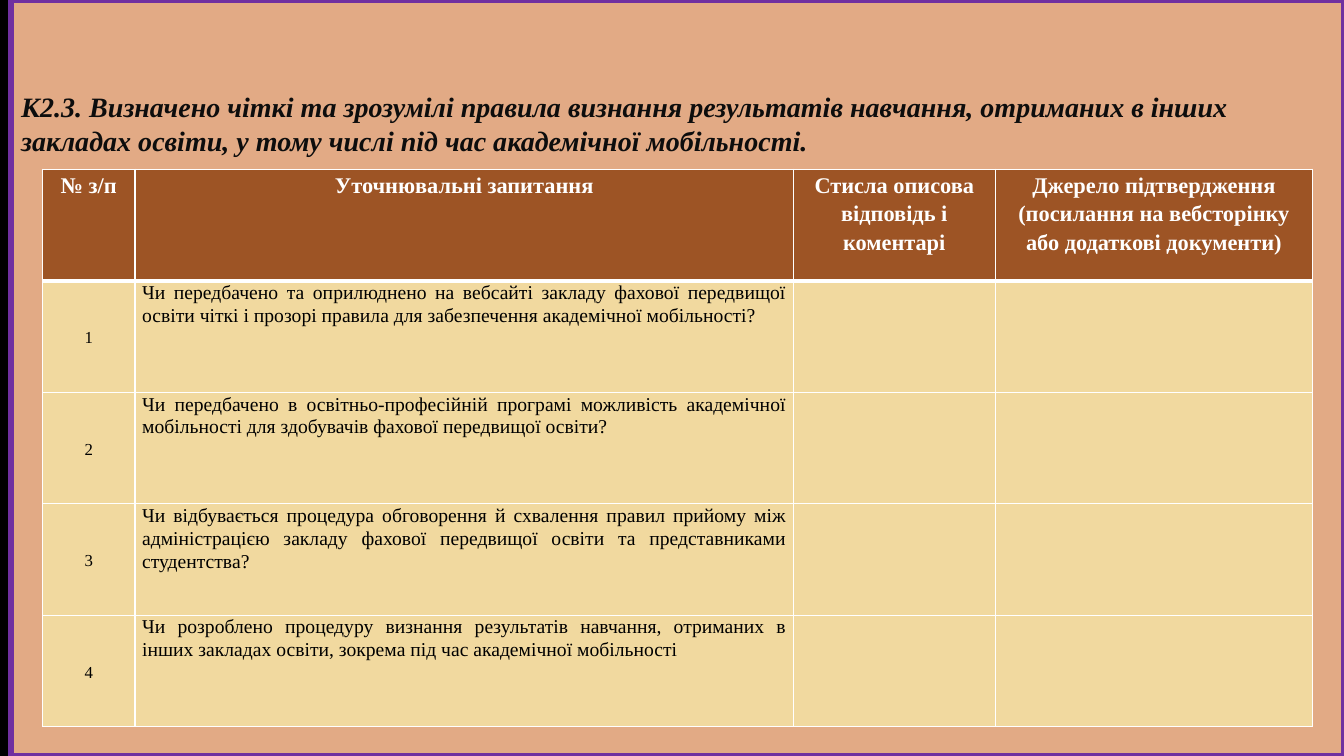
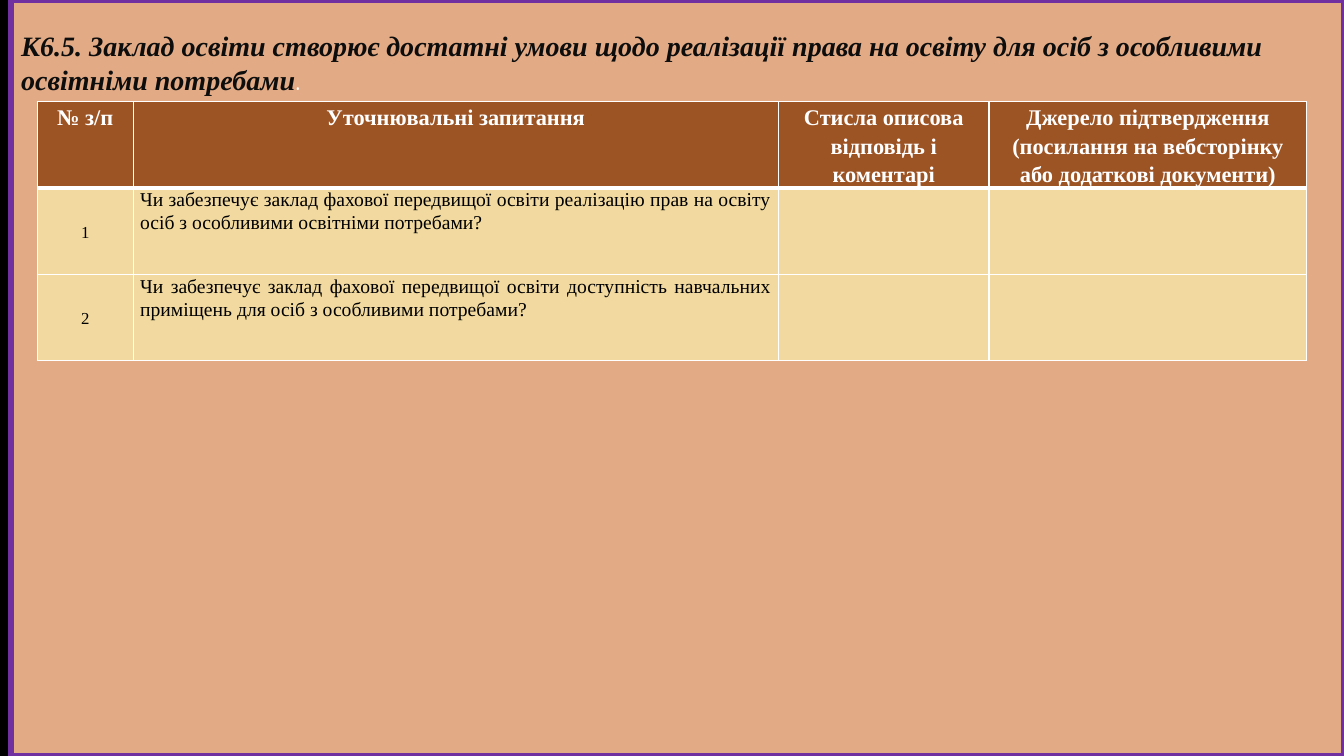
from dataclasses import dataclass

from lxml import etree
from pptx import Presentation
from pptx.dml.color import RGBColor
from pptx.enum.shapes import MSO_SHAPE
from pptx.enum.text import MSO_ANCHOR, MSO_AUTO_SIZE, PP_ALIGN
from pptx.oxml.ns import qn
from pptx.util import Inches, Pt

RECTANGLE = MSO_SHAPE.RECTANGLE
TOP, MIDDLE = MSO_ANCHOR.TOP, MSO_ANCHOR.MIDDLE
LEFT, CENTER, JUSTIFY = PP_ALIGN.LEFT, PP_ALIGN.CENTER, PP_ALIGN.JUSTIFY
NO_AUTOFIT = MSO_AUTO_SIZE.NONE


@dataclass(frozen=True)
class Theme:
    font: str = "Times New Roman"
    stop_font: str = "Quicksand"
    backdrop: str = "000000"
    panel: str = "E2AA85"
    frame: str = "7030A0"
    title: str = "0D0D0D"
    header: str = "9D5425"
    body: str = "F1D99F"
    light: str = "FFFFFF"
    dark: str = "000000"
    title_size: float = 20
    header_size: float = 16
    number_size: float = 12
    question_size: float = 14
    frame_width: float = 4.5
    rule: float = 1
    header_rule: float = 3


THEME = Theme()
HEADERS = [
    "№ з/п",
    "Уточнювальні запитання",
    "Стисла описова відповідь і коментарі",
    "Джерело підтвердження\n(посилання на вебсторінку або додаткові документи)",
]
CRITERIA = [
    {
        "title": ["К2.3. Визначено чіткі та зрозумілі правила визнання результатів навчання, отриманих в інших закладах освіти, у тому числі під час академічної мобільності."],
        "title_top": 0.87,
        "table": (0.42, 1.68, 12.6, 5.53),
        "columns": (0.92, 6.53, 2, 3.15),
        "questions": [
            "Чи передбачено та оприлюднено на вебсайті закладу фахової передвищої освіти чіткі і прозорі правила для забезпечення академічної мобільності?",
            "Чи передбачено в освітньо-професійній програмі можливість академічної мобільності для здобувачів фахової передвищої освіти?",
            "Чи відбувається процедура обговорення й схвалення правил прийому між адміністрацією закладу фахової передвищої освіти та представниками студентства?",
            "Чи розроблено процедуру визнання результатів навчання, отриманих в інших закладах освіти, зокрема під час академічної мобільності",
        ],
    },
    {
        "title": ["К6.5. Заклад освіти створює достатні умови щодо реалізації права на освіту для осіб з особливими освітніми потребами", "."],
        "title_top": 0.27,
        "table": (0.37, 1.01, 12.59, 2.57),
        "columns": (0.95, 6.4, 2.09, 3.15),
        "questions": [
            "Чи забезпечує заклад фахової передвищої освіти реалізацію прав на освіту осіб з особливими освітніми потребами?",
            "Чи забезпечує заклад фахової передвищої освіти доступність навчальних приміщень для осіб з особливими потребами?",
        ],
    },
]


def format_run(run, size, color, bold=False, italic=False, font=THEME.font):
    run.font.name = font
    run.font.size = Pt(size)
    run.font.color.rgb = RGBColor.from_string(color)
    run.font.bold = bold
    run.font.italic = italic


def paint_cell(cell, fill, top_rule, bottom_rule):
    properties = cell._tc.get_or_add_tcPr()
    rules = {"L": THEME.rule, "R": THEME.rule, "T": top_rule, "B": bottom_rule}
    for side, width in rules.items():
        border = etree.SubElement(properties, qn(f"a:ln{side}"), w=str(Pt(width)))
        solid = etree.SubElement(border, qn("a:solidFill"))
        etree.SubElement(solid, qn("a:srgbClr"), val=THEME.light)
    cell.fill.solid()
    cell.fill.fore_color.rgb = RGBColor.from_string(fill)
    cell.margin_left = cell.margin_right = Inches(0.07)
    cell.margin_top = cell.margin_bottom = 0


deck = Presentation()
deck.slide_width = Inches(13.33)
deck.slide_height = Inches(7.5)
layout = deck.slide_layouts.get_by_name("Title Only")
layout.background.fill.solid()
layout.background.fill.fore_color.rgb = RGBColor.from_string(THEME.backdrop)
slides = [deck.slides.add_slide(layout) for _ in CRITERIA]

panel = slides[0].shapes.add_shape(
    RECTANGLE, Inches(0.11), 0, Inches(13.22), deck.slide_height
)
panel.shadow.inherit = False
panel.fill.solid()
panel.fill.fore_color.rgb = RGBColor.from_string(THEME.panel)
panel.line.color.rgb = RGBColor.from_string(THEME.frame)
panel.line.width = Pt(THEME.frame_width)
layout.shapes._spTree.insert(2, panel._element)

for slide, criterion in zip(slides, CRITERIA):
    title = slide.shapes.title
    title.left, title.top = Inches(0.11), Inches(criterion["title_top"])
    title.width, title.height = Inches(13.22), Inches(0.7)
    heading = title.text_frame
    heading.word_wrap = True
    heading.auto_size = NO_AUTOFIT
    heading.vertical_anchor = MIDDLE
    heading.margin_left = heading.margin_right = Inches(0.1)
    heading.margin_top = heading.margin_bottom = 0
    statement = heading.paragraphs[0]
    statement.alignment = LEFT
    statement.line_spacing = 1.0
    for part in criterion["title"]:
        run = statement.add_run()
        run.text = part
        if part == ".":
            format_run(run, THEME.title_size, THEME.light, font=THEME.stop_font)
        else:
            format_run(run, THEME.title_size, THEME.title, bold=True, italic=True)

    rows = [HEADERS] + [
        [str(number), question, "", ""]
        for number, question in enumerate(criterion["questions"], 1)
    ]
    place = [Inches(length) for length in criterion["table"]]
    checklist = slide.shapes.add_table(len(rows), len(HEADERS), *place).table
    checklist.horz_banding = False
    for column, width in zip(checklist.columns, criterion["columns"]):
        column.width = Inches(width)

    for row_index, row in enumerate(rows):
        is_header = row_index == 0
        fill = THEME.header if is_header else THEME.body
        color = THEME.light if is_header else THEME.dark
        top_rule = THEME.header_rule if row_index == 1 else THEME.rule
        bottom_rule = THEME.header_rule if is_header else THEME.rule
        for column_index, content in enumerate(row):
            cell = checklist.cell(row_index, column_index)
            paint_cell(cell, fill, top_rule, bottom_rule)
            is_number = not is_header and column_index == 0
            is_question = not is_header and column_index == 1
            cell.vertical_anchor = MIDDLE if is_number else TOP
            size = THEME.header_size
            if is_number:
                size = THEME.number_size
            elif is_question:
                size = THEME.question_size
            cell.text_frame.text = content
            for paragraph in cell.text_frame.paragraphs:
                paragraph.alignment = JUSTIFY if is_question else CENTER
                paragraph.line_spacing = 1.06 if is_question else 1.15
                for run in paragraph.runs:
                    format_run(run, size, color, bold=is_header)

deck.save("out.pptx")
